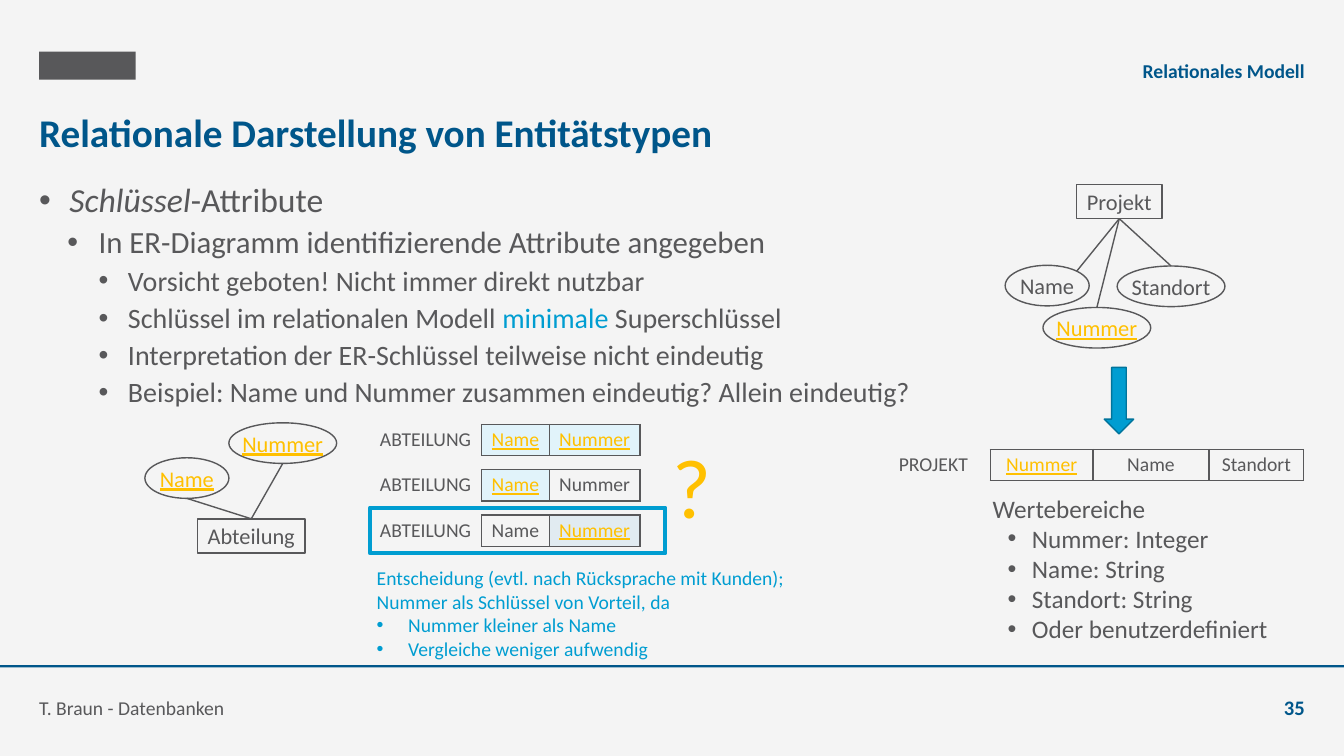
from dataclasses import dataclass

from lxml import etree
from pptx import Presentation
from pptx.dml.color import RGBColor
from pptx.enum import shapes, text
from pptx.oxml import ns
from pptx.util import Pt


@dataclass(frozen=True)
class Theme:
    font: str = "Calibri"
    back: str = "F4F4F4"
    grey: str = "58585A"
    navy: str = "00568A"
    cyan: str = "009DD1"
    cyan_dark: str = "00749B"
    gold: str = "FFC000"
    key_fill: str = "E1F3FA"
    chosen_fill: str = "E1EBF1"
    title: float = 28
    levels: tuple = (24, 22, 20)
    domain: float = 18
    node: float = 16
    small: float = 14
    number: float = 14.7
    mark: float = 60


T = Theme()
BOX = shapes.MSO_SHAPE.RECTANGLE
OVAL = shapes.MSO_SHAPE.OVAL
MID, BOTTOM = text.MSO_ANCHOR.MIDDLE, text.MSO_ANCHOR.BOTTOM
CENTER, RIGHT = text.PP_ALIGN.CENTER, text.PP_ALIGN.RIGHT


def rgb(color):
    return RGBColor.from_string(color)


def style(r, size, color=T.grey, bold=False, italic=False, underline=False):
    f = r.font
    f.name, f.size, f.color.rgb = T.font, Pt(size), rgb(color)
    f.bold, f.italic, f.underline = bold, italic, underline


def indent(p, left, hanging=0):
    """Set the left margin; a hanging indent also gets a bullet."""
    pPr = p._p.get_or_add_pPr()
    pPr.set("marL", str(Pt(left)))
    pPr.set("indent", str(-Pt(hanging)))
    if hanging:
        etree.SubElement(pPr, ns.qn("a:buFont"), typeface="Arial")
        etree.SubElement(pPr, ns.qn("a:buChar"), char="•")


def paragraph(tf, first, *parts, size, color=T.grey, align=None, **look):
    """Fill one paragraph; each part is a text or a (text, look) pair."""
    p = tf.paragraphs[0] if first else tf.add_paragraph()
    p.alignment = align
    for part in parts:
        words, own = part if isinstance(part, tuple) else (part, {})
        r = p.add_run()
        r.text = words
        style(r, size, **{"color": color, **look, **own})
    return p


def textbox(s, x, y, w, h, anchor=None, inset=True, wrap=True):
    tf = s.shapes.add_textbox(Pt(x), Pt(y), Pt(w), Pt(h)).text_frame
    tf.word_wrap = wrap
    tf.vertical_anchor = anchor
    if not inset:
        tf.margin_left = tf.margin_top = tf.margin_right = tf.margin_bottom = 0
    return tf


def shape(s, kind, x, y, w, h, fill=None, line=None, width=1):
    sp = s.shapes.add_shape(kind, Pt(x), Pt(y), Pt(w), Pt(h))
    sp.shadow.inherit = False
    if fill:
        sp.fill.solid()
        sp.fill.fore_color.rgb = rgb(fill)
    else:
        sp.fill.background()
    if line:
        sp.line.color.rgb, sp.line.width = rgb(line), Pt(width)
    else:
        sp.line.fill.background()
    return sp


def node(s, kind, label, x, y, w, h, key=False):
    sp = shape(s, kind, x, y, w, h, T.back, T.grey)
    tf = sp.text_frame
    tf.word_wrap, tf.vertical_anchor = False, MID
    tf.text = label
    p = tf.paragraphs[0]
    p.alignment = CENTER
    style(p.runs[0], T.node, T.gold if key else T.grey, underline=key)
    return sp


def er_diagram(s, entity, side, attributes):
    """Draw an entity and its attributes, joined from one side of the entity."""
    box = node(s, BOX, *entity)
    for label, x, y, w, key, across, down in attributes:
        h = 29
        node(s, OVAL, label, x, y, w, h, key)
        c = s.shapes.add_connector(shapes.MSO_CONNECTOR.STRAIGHT, 0, 0,
                                   Pt(x + across * w), Pt(y + down * h))
        c.begin_connect(box, side)
        c.line.color.rgb, c.line.width = rgb(T.grey), Pt(1)
        etree.SubElement(c._element.spPr, ns.qn("a:effectLst"))


def border(cell, sides):
    """Draw the named sides of a cell and clear the others."""
    tcPr = cell._tc.get_or_add_tcPr()
    for i, side in enumerate("LRTB"):
        ln = etree.Element(ns.qn("a:ln" + side), w=str(Pt(1)))
        if side in sides:
            solid = etree.SubElement(ln, ns.qn("a:solidFill"))
            etree.SubElement(solid, ns.qn("a:srgbClr"), val=T.grey)
        else:
            etree.SubElement(ln, ns.qn("a:noFill"))
        tcPr.insert(i, ln)


def relation(s, x, y, widths, name, *columns):
    """Draw a relation schema; each column is (label, is key, fill)."""
    cells = [(name, False, None), *columns]
    frame = s.shapes.add_table(1, len(cells), Pt(x), Pt(y), Pt(sum(widths)), Pt(22.4))
    table = frame.table
    table.first_row = table.horz_banding = False
    for i, (label, key, fill) in enumerate(cells):
        table.columns[i].width = Pt(widths[i])
        cell = table.cell(0, i)
        cell.margin_left = cell.margin_right = Pt(5.4)
        cell.margin_top = cell.margin_bottom = Pt(2.6)
        cell.text = label
        p = cell.text_frame.paragraphs[0]
        p.alignment = CENTER
        style(p.runs[0], T.small, T.gold if key else T.grey, underline=key)
        if fill:
            cell.fill.solid()
            cell.fill.fore_color.rgb = rgb(fill)
        else:
            cell.fill.background()
        border(cell, "LRTB" if i else "R")


def frame_parts(s):
    # Header, title and footer
    shape(s, BOX, 28, 37, 69, 20, T.grey)
    shape(s, BOX, 0, 475.2, 960, 1.6, T.navy)
    for x, y, w, h, words, size, color, bold, align, anchor in (
        (283, 31, 649, 28, "Relationales Modell", T.small, T.navy, True, RIGHT, BOTTOM),
        (28, 71.5, 904, 45, "Relationale Darstellung von Entitätstypen",
         T.title, T.navy, True, None, MID),
        (28, 486, 662, 28, "T. Braun - Datenbanken", T.small, T.grey, False, None, BOTTOM),
        (875, 486, 57, 28, "35", T.number, T.navy, True, RIGHT, BOTTOM),
    ):
        tf = textbox(s, x, y, w, h, anchor, inset=False)
        paragraph(tf, True, words, size=size, color=color, bold=bold, align=align)


def outline(s):
    # Bulleted outline
    tf = textbox(s, 28, 131, 904, 334, inset=False)
    margins = ((21.6, 21.6), (42.5, 22.3), (63.4, 20.9))
    for i, (level, *parts) in enumerate((
        (0, ("Schlüssel", {"italic": True}), "-Attribute"),
        (1, "In ER-Diagramm identifizierende Attribute angegeben"),
        (2, "Vorsicht geboten! Nicht immer direkt nutzbar"),
        (2, "Schlüssel im relationalen Modell ", ("minimale", {"color": T.cyan}),
         " Superschlüssel"),
        (2, "Interpretation der ER-Schlüssel teilweise nicht eindeutig"),
        (2, "Beispiel: Name und Nummer zusammen eindeutig? Allein eindeutig?"),
    )):
        p = paragraph(tf, i == 0, *parts, size=T.levels[level])
        p.level = level
        indent(p, *margins[level])
        p.line_spacing, p.space_before = 0.9, Pt(5)


def listing(s, place, intro, items, left, hanging, size, color):
    tf = textbox(s, *place)
    paragraph(tf, True, intro, size=size, color=color)
    for item in items:
        indent(paragraph(tf, False, item, size=size, color=color), left, hanging)


def project(s):
    # Project: diagram, arrow, relation and domains
    er_diagram(s, ("Projekt", 769, 131.8, 61, 24.4), 2, (
        ("Name", 718, 189.5, 60, False, 0.85, 0.15),
        ("Nummer", 745, 219.6, 77, True, 0.5, 0),
        ("Standort", 798, 190, 77, False, 0.5, 0),
    ))
    arrow = shape(s, shapes.MSO_SHAPE.RIGHT_ARROW, 775.5, 275.7, 47.5, 21,
                  T.cyan, T.cyan_dark)
    arrow.rotation = 90
    relation(s, 626, 321, (81.4, 73.4, 82.8, 67.7), "PROJEKT",
             ("Nummer", True, None), ("Name", False, None), ("Standort", False, None))
    listing(s, (702, 348.5, 217, 117), "Wertebereiche",
            ("Nummer: Integer", "Name: String", "Standort: String", "Oder benutzerdefiniert"),
            28, 17.3, T.domain, T.grey)


def department(s):
    # Department: diagram, candidate relations and decision
    er_diagram(s, ("Abteilung", 141, 370.6, 77, 24.4), 0, (
        ("Name", 103.5, 327, 60, True, 0.5, 1),
        ("Nummer", 163.5, 302, 77, True, 0.5, 1),
    ))
    for i, (name_fill, number_fill) in enumerate((
        (T.key_fill, T.key_fill), (T.key_fill, None), (None, T.chosen_fill),
    )):
        relation(s, 264, 303.2 + 32.3 * i, (80, 48.4, 64.8), "ABTEILUNG",
                 ("Name", bool(name_fill), name_fill),
                 ("Nummer", bool(number_fill), number_fill))
    tf = textbox(s, 473, 306.7, 42.5, 80, wrap=False)
    paragraph(tf, True, "?", size=T.mark, color=T.gold)
    shape(s, BOX, 264.3, 362.6, 211, 32.6, line=T.cyan, width=3)
    listing(s, (262, 401, 307, 75),
            "Entscheidung (evtl. nach Rücksprache mit Kunden); "
            "Nummer als Schlüssel von Vorteil, da",
            ("Nummer kleiner als Name", "Vergleiche weniger aufwendig"),
            22.5, 22.5, T.small, T.cyan)


def main():
    prs = Presentation()
    prs.slide_width, prs.slide_height = Pt(960), Pt(540)
    s = prs.slides.add_slide(prs.slide_layouts[6])
    s.background.fill.solid()
    s.background.fill.fore_color.rgb = rgb(T.back)
    frame_parts(s)
    outline(s)
    project(s)
    department(s)
    prs.save("out.pptx")


if __name__ == "__main__":
    main()
